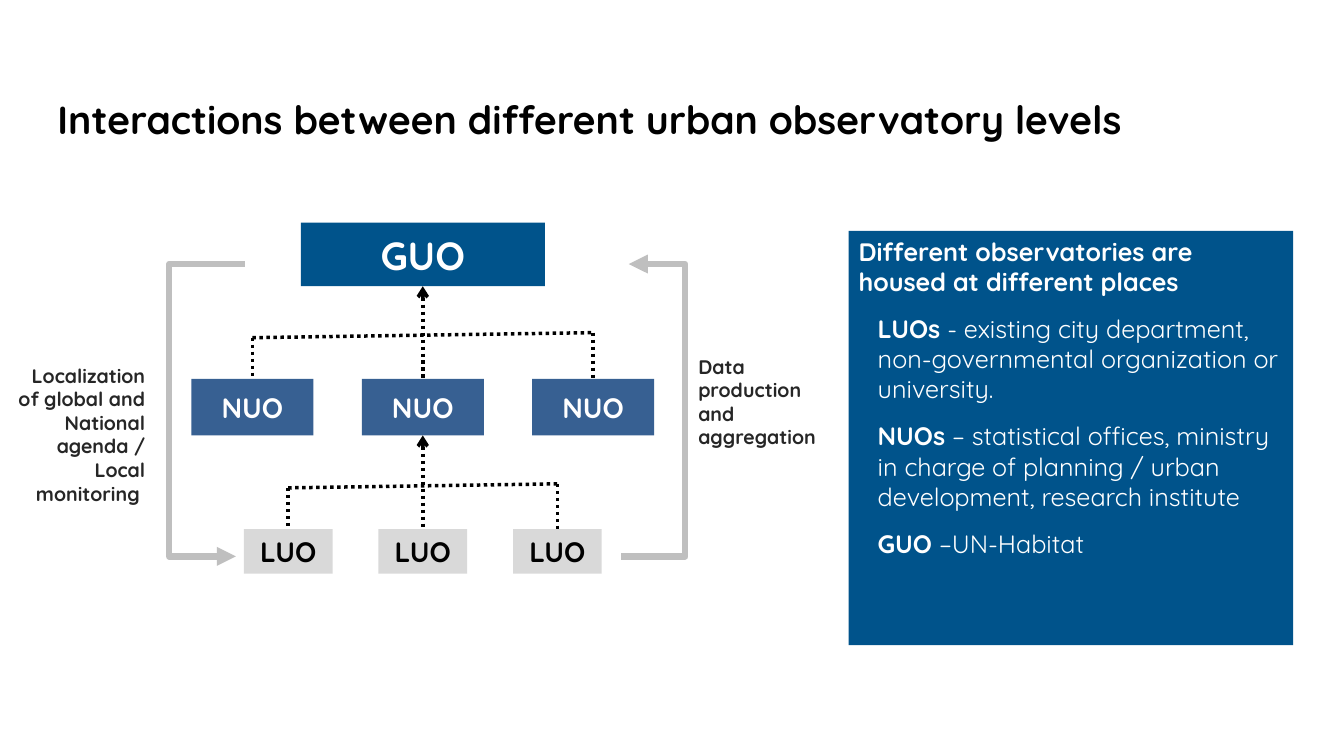
from lxml import etree
from pptx import Presentation
from pptx import util as u
from pptx.dml.color import RGBColor
from pptx.enum import dml, shapes, text
from pptx.oxml.ns import qn

PX = 4572  # EMU per px, 200 px to the inch
COLORS = {
    "navy": "00538B", "blue": "376092", "light": "D9D9D9", "gray": "BFBFBF",
    "black": "000000", "dark": "262626", "white": "FFFFFF",
}
ALIGN = text.PP_ALIGN
ANCHOR = text.MSO_ANCHOR


def rgb(name):
    return RGBColor.from_string(COLORS[name])


def write(tf, paragraphs, size, color, align=ALIGN.LEFT, anchor=ANCHOR.TOP,
          after=None, line=None, inset=None, indent=0):
    """Fill tf; each paragraph is a list of (text, bold) runs.

    The indent applies to every paragraph after the first.
    """
    tf.word_wrap = True
    tf.vertical_anchor = anchor
    if inset is not None:
        tf.margin_left = tf.margin_right = inset
        tf.margin_top = tf.margin_bottom = inset
    for i, runs in enumerate(paragraphs):
        p = tf.add_paragraph() if i else tf.paragraphs[0]
        p.alignment = align
        if after:
            p.space_after = u.Pt(after)
        if line:
            p.line_spacing = u.Pt(line)
        if i and indent:
            pPr = p._p.get_or_add_pPr()
            pPr.set("marL", str(indent * PX))
            pPr.set("indent", "0")
        for words, bold in runs:
            r = p.add_run()
            r.text = words
            r.font.name = "Quicksand"
            r.font.size = u.Pt(size)
            r.font.bold = bold
            r.font.color.rgb = rgb(color)


class Deck:
    def __init__(self, width, height):
        self.prs = Presentation()
        self.prs.slide_width = width * PX
        self.prs.slide_height = height * PX
        self.s = self.prs.slides.add_slide(self.prs.slide_layouts[6])

    def label(self, x, y, w, h, words, size, color, **fmt):
        sp = self.s.shapes.add_textbox(x * PX, y * PX, w * PX, h * PX)
        write(sp.text_frame, [[(words, True)]], size, color, **fmt)

    def box(self, x, y, w, h, fill, paragraphs, size, color="white",
            kind=shapes.MSO_SHAPE.ROUNDED_RECTANGLE, **fmt):
        sp = self.s.shapes.add_shape(kind, x * PX, y * PX, w * PX, h * PX)
        if len(sp.adjustments):
            sp.adjustments[0] = 0
        sp.shadow.inherit = False
        sp.fill.solid()
        sp.fill.fore_color.rgb = rgb(fill)
        sp.line.fill.background()
        write(sp.text_frame, paragraphs, size, color, **fmt)
        return sp

    def node(self, x, y, w, h, fill, name, size, color="white"):
        return self.box(x, y, w, h, fill, [[(name, True)]], size, color,
                        align=ALIGN.CENTER, anchor=ANCHOR.MIDDLE)

    def head(self, line, kind):
        etree.SubElement(line._get_or_add_ln(), qn("a:headEnd"), type=kind)

    def dotted(self, start, end):
        """Take points in EMU."""
        c = self.s.shapes.add_connector(
            shapes.MSO_CONNECTOR.STRAIGHT, *start, *end)
        c.line.color.rgb = rgb("black")
        c.line.width = u.Pt(2.5)
        c.line.dash_style = dml.MSO_LINE.ROUND_DOT
        etree.SubElement(c._element.spPr, qn("a:effectLst"))
        return c

    def tree(self, parent, children, left_y, right_y):
        """Join three children to their parent with dotted lines."""
        tops = [(sp.left + sp.width // 2, sp.top) for sp in children]
        left, right = (tops[0][0], left_y * PX), (tops[2][0], right_y * PX)
        self.dotted(left, tops[0]).end_connect(children[0], 0)
        self.dotted(right, tops[2]).end_connect(children[2], 0)
        self.dotted(left, right)
        stem = self.dotted((tops[1][0], parent.top + parent.height), tops[1])
        stem.begin_connect(parent, 2)
        stem.end_connect(children[1], 0)
        self.head(stem.line, "arrow")

    def bracket(self, points):
        """Draw an open path whose arrowhead is at the first point."""
        fb = self.s.shapes.build_freeform(*points[0], scale=PX)
        fb.add_line_segments(points[1:], close=False)
        sp = fb.convert_to_shape()
        sp.shadow.inherit = False
        sp.fill.background()
        sp.line.color.rgb = rgb("gray")
        sp.line.width = u.Pt(4.5)
        self.head(sp.line, "triangle")


def main():
    d = Deck(2667, 1500)

    # Title
    d.label(114, 184, 2204, 94,
            "Interactions between different urban observatory levels",
            28, "black", line=35.4, inset=0)

    # Observatory levels
    guo = d.node(597, 442, 484, 126, "navy", "GUO", 28)
    nuos = [d.node(380 + 338 * i, 752, 242, 112, "blue", "NUO", 20)
            for i in range(3)]
    luos = [d.node(484 + 267 * i, 1050, 176, 88, "light", "LUO", 20, "black")
            for i in range(3)]
    d.tree(guo, nuos, 670, 660)
    d.tree(nuos[1], luos, 968, 960)

    # Flows on both sides
    d.label(1366, 694, 322, 134, "Data production and aggregation",
            14, "dark")
    d.label(12, 712, 296, 224, "Localization of global and National agenda / "
            "Local monitoring ", 14, "dark", align=ALIGN.RIGHT)
    top, bottom = 524, 1104
    d.bracket([(468, bottom), (336, bottom), (336, top), (486, top)])
    d.bracket([(1248, top), (1360, top), (1360, bottom), (1232, bottom)])

    # Panel on hosts
    d.box(1684, 458, 882, 822, "navy", [
        [("Different observatories are housed at different places", True)],
        [("LUOs", True), (" - existing city department, non-governmental "
                          "organization or university.", False)],
        [("NUOs", True), (" – statistical offices, ministry in charge of "
                          "planning / urban development, research institute",
                          False)],
        [("GUO", True), (" –UN-Habitat", False)],
    ], 18, kind=shapes.MSO_SHAPE.RECTANGLE, after=12, indent=38)

    d.prs.save("out.pptx")


if __name__ == "__main__":
    main()
